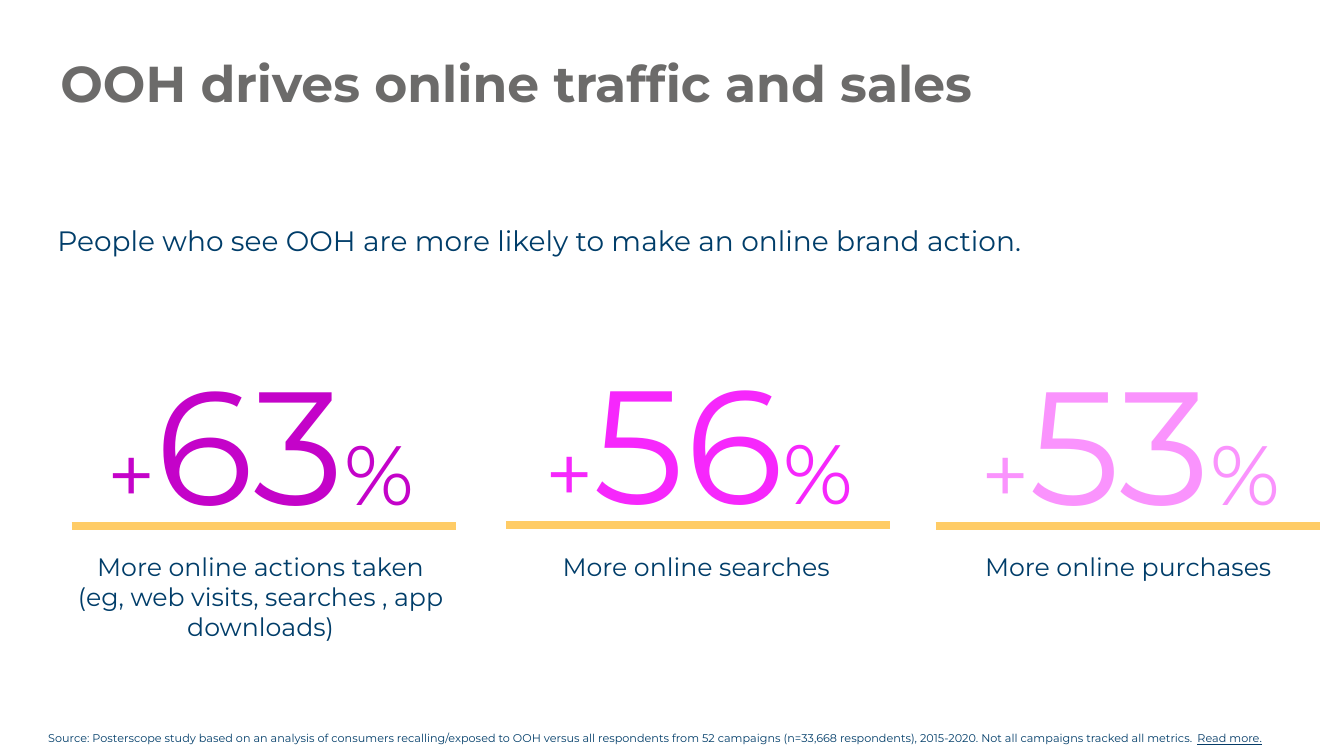
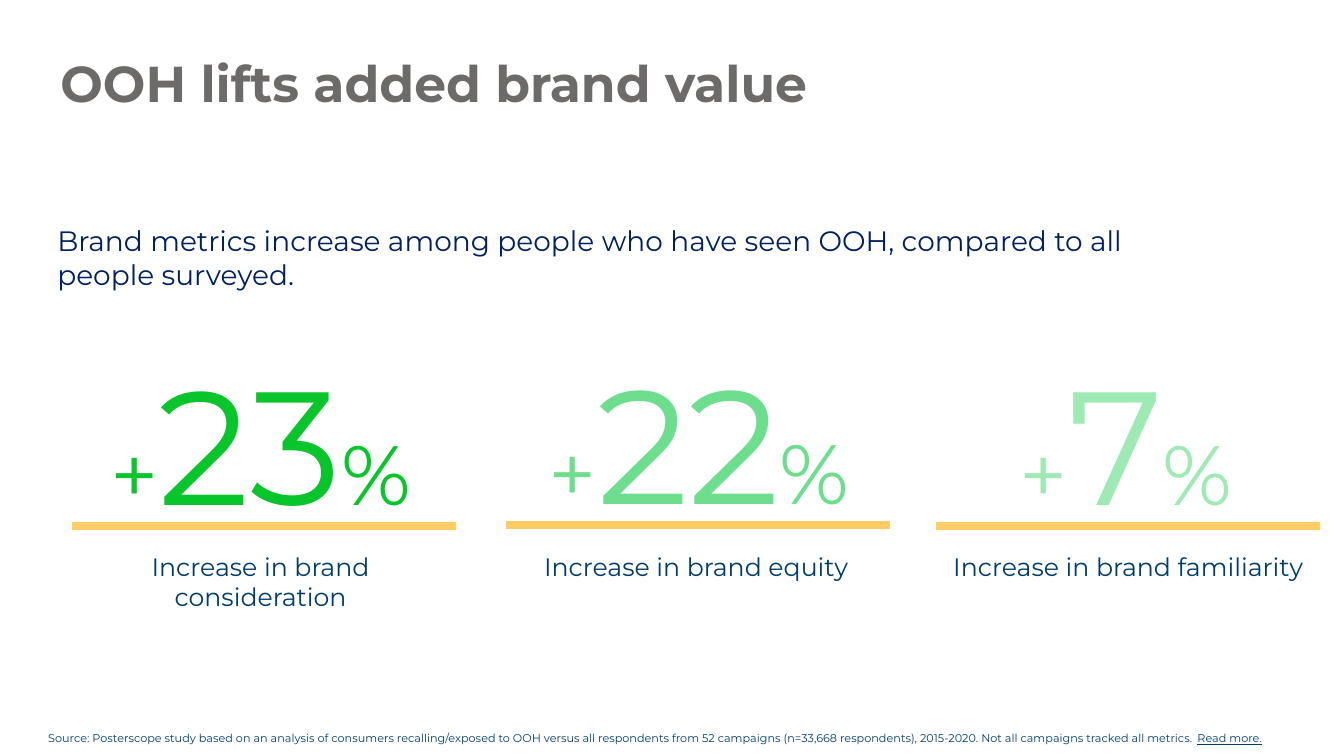
from dataclasses import dataclass
from lxml.etree import SubElement
from pptx import Presentation
from pptx.dml.color import RGBColor as RGB
from pptx.enum.shapes import MSO_CONNECTOR as Link
from pptx.enum.text import MSO_AUTO_SIZE as Fit, PP_ALIGN as Align
from pptx.oxml.ns import qn
from pptx.util import Pt

PX = 9144


@dataclass(frozen=True)
class Theme:
    font: str = "Montserrat"
    grey: str = "6C6B6A"
    navy: str = "003D69"
    link: str = "063C68"
    gold: str = "FFCC66"
    title: int = 36
    lead: int = 20
    label: int = 18
    note: int = 8
    sign: int = 60
    digit: int = 115
    rule: int = 6


T = Theme()

SOURCE = (
    "Source: Posterscope study based on an analysis of consumers recalling/exposed "
    "to OOH versus all respondents from 52 campaigns (n=33,668 respondents), "
    "2015-2020. Not all campaigns tracked all metrics. "
)
MORE = "Read more."

COLS = [
    {"rule": (71, 522), "label": (65, 387)},
    {"rule": (502, 521), "label": (497, 387)},
    {"rule": (928, 522), "label": (928, 382)},
]
RULE_W = 381

SLIDES = [
    {
        "title": "OOH drives online traffic and sales",
        "lead": ("People who see OOH are more likely to make an online brand action.", T.navy, 44),
        "stats": [
            ("63", "C403C9", (65, 387), "More online actions taken (eg, web visits, searches , app downloads)", 128),
            ("56", "F627FC", (482, 423), "More online searches", 40),
            ("53", "FA93FD", (934, 375), "More online purchases", 40),
        ],
    },
    {
        "title": "OOH lifts added brand value",
        "lead": ("Brand metrics increase among people who have seen OOH, compared to all people surveyed.", "002060", 77),
        "stats": [
            ("23", "07C52B", (65, 387), "Increase in brand consideration", 98),
            ("22", "6DDE8E", (482, 423), "Increase in brand equity", 40),
            ("7", "9EE9B4", (947, 340), "Increase in brand familiarity", 40),
        ],
    },
]


def px(*nums):
    return [n * PX for n in nums]


def add_text(slide, box, runs, align=Align.LEFT, grow=True):
    frame = slide.shapes.add_textbox(*px(*box)).text_frame
    frame.word_wrap = True
    frame.auto_size = Fit.SHAPE_TO_FIT_TEXT if grow else Fit.NONE
    para = frame.paragraphs[0]
    para.alignment = align
    for text, size, color in runs:
        run = para.add_run()
        run.text = text
        run.font.name = T.font
        run.font.size = Pt(size)
        run.font.color.rgb = RGB.from_string(color)
    return frame


def add_title(slide, text):
    frame = add_text(slide, (60, 46, 923, 60), [(text, T.title, T.grey)], grow=False)
    frame.margin_left = frame.margin_right = frame.margin_top = frame.margin_bottom = 0
    para = frame.paragraphs[0]
    para.line_spacing = 1.1
    para.runs[0].font.bold = True


def add_note(slide):
    runs = [(SOURCE, T.note, T.navy), (MORE, T.note, T.link)]
    frame = add_text(slide, (38, 721, 1272, 24), runs)
    frame.paragraphs[0].runs[1].font.underline = True


def add_rule(slide, x, y):
    rule = slide.shapes.add_connector(Link.STRAIGHT, *px(x, y, x + RULE_W, y))
    rule.line.color.rgb = RGB.from_string(T.gold)
    rule.line.width = Pt(T.rule)
    SubElement(rule._element.spPr, qn("a:effectLst"))


def add_stat(slide, col, stat):
    num, color, (left, width), label, tall = stat
    x, y = col["rule"]
    runs = [("+", T.sign, color), (num, T.digit, color), ("%", T.sign, color)]
    add_text(slide, (left, y - 185, width, 204), runs, Align.CENTER)
    add_rule(slide, x, y)
    left, width = col["label"]
    add_text(slide, (left, 542, width, tall), [(label, T.label, T.navy)], Align.CENTER)


def main():
    deck = Presentation()
    deck.slide_width, deck.slide_height = px(1333, 750)
    for data in SLIDES:
        slide = deck.slides.add_slide(deck.slide_layouts[6])
        add_title(slide, data["title"])
        text, color, tall = data["lead"]
        add_text(slide, (47, 217, 1088, tall), [(text, T.lead, color)])
        for col, stat in zip(COLS, data["stats"]):
            add_stat(slide, col, stat)
        add_note(slide)
    deck.save("out.pptx")


if __name__ == "__main__":
    main()
